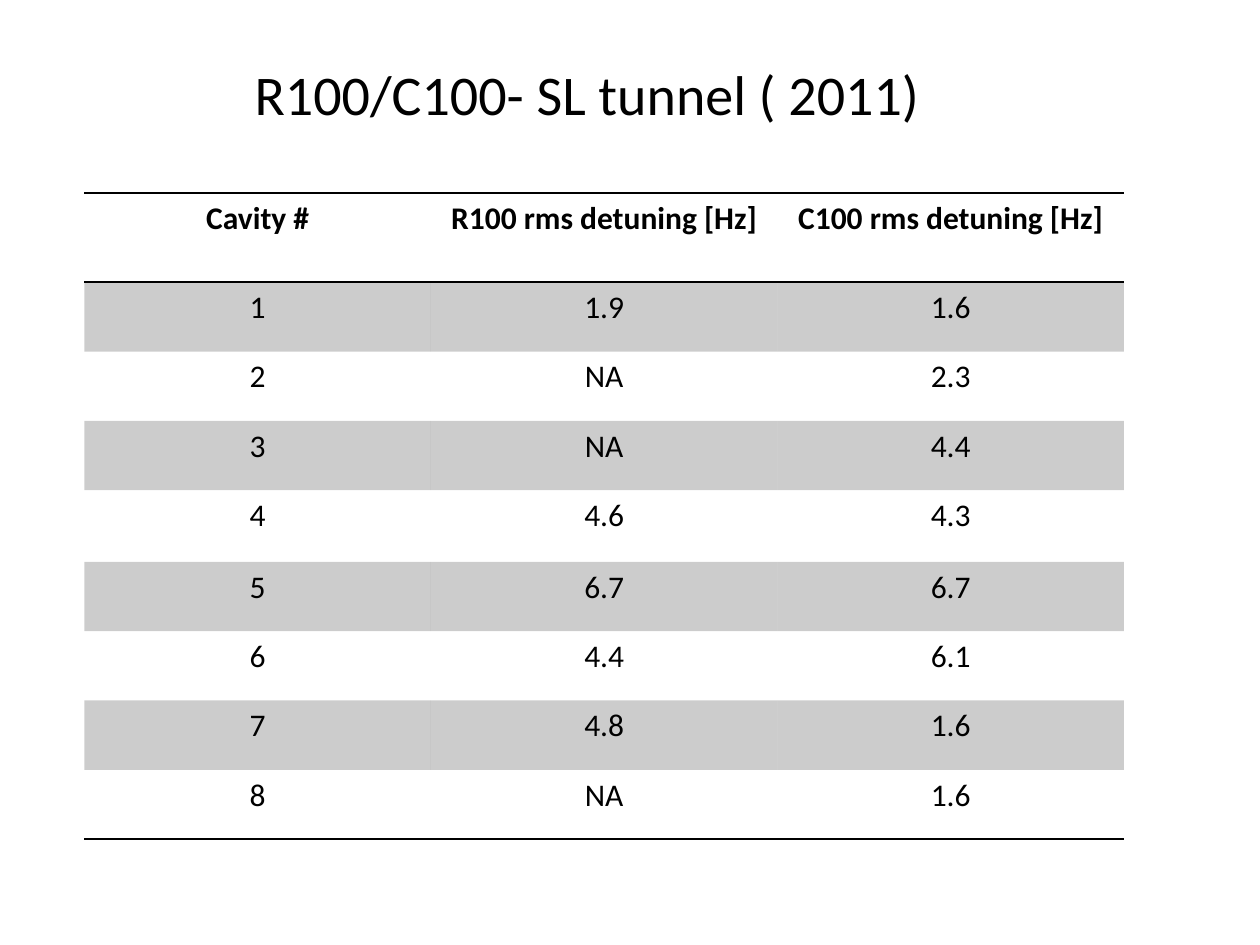
import pptx
import pptx.dml.color
import pptx.enum.text
import pptx.oxml
import pptx.oxml.ns
import pptx.util
from pptx.util import Inches

BLACK = pptx.dml.color.RGBColor(0, 0, 0)
BAND_OPACITY = 20
NO_STYLE_NO_GRID = "{2D5ABB26-0587-4C30-8999-92F81FD0307C}"
TITLE_FORMAT = {"name": "Calibri", "size": pptx.util.Pt(32), "bold": False}
HEADER_FORMAT = {"name": "Calibri", "size": pptx.util.Pt(18), "bold": True}
BODY_FORMAT = {**HEADER_FORMAT, "bold": False}

ROWS = [
    ("Cavity #", "R100 rms detuning [Hz]", "C100 rms detuning [Hz]"),
    ("1", "1.9", "1.6"),
    ("2", "NA", "2.3"),
    ("3", "NA", "4.4"),
    ("4", "4.6", "4.3"),
    ("5", "6.7", "6.7"),
    ("6", "4.4", "6.1"),
    ("7", "4.8", "1.6"),
    ("8", "NA", "1.6"),
]
COLUMN_WIDTH = 2.75
ROW_HEIGHTS = [0.71] + [0.55] * 3 + [0.57] + [0.55] * 4


def write_text(text_frame, text, font_format, alignment):
    paragraph = text_frame.paragraphs[0]
    paragraph.alignment = alignment
    run = paragraph.add_run()
    run.text = text
    for attribute, value in font_format.items():
        setattr(run.font, attribute, value)
    run.font.color.rgb = BLACK


def add_title(slide, text):
    title = slide.shapes.title
    box = {"left": 1.92, "top": 0.42, "width": 5.75, "height": 0.83}
    for attribute, value in box.items():
        setattr(title, attribute, Inches(value))
    text_frame = title.text_frame
    text_frame.word_wrap = True
    text_frame.auto_size = pptx.enum.text.MSO_AUTO_SIZE.NONE
    text_frame.vertical_anchor = pptx.enum.text.MSO_ANCHOR.TOP
    write_text(text_frame, text, TITLE_FORMAT, pptx.enum.text.PP_ALIGN.LEFT)


def add_borders(cell, sides):
    """Draw 1 pt lines on the given sides; call before filling the cell."""
    properties = cell._tc.get_or_add_tcPr()
    for side in sides:
        properties.append(pptx.oxml.parse_xml(
            f'<a:ln{side} {pptx.oxml.ns.nsdecls("a")} w="12700">'
            f'<a:solidFill><a:srgbClr val="{BLACK}"/></a:solidFill></a:ln{side}>'
        ))


def fill_band(cell):
    """Fill with translucent black."""
    cell.fill.solid()
    cell.fill.fore_color.rgb = BLACK
    color = cell._tc.tcPr.find(".//" + pptx.oxml.ns.qn("a:srgbClr"))
    color.append(pptx.oxml.parse_xml(
        f'<a:alpha {pptx.oxml.ns.nsdecls("a")} val="{BAND_OPACITY * 1000}"/>'
    ))


def add_detuning_table(slide):
    column_count = len(ROWS[0])
    frame = slide.shapes.add_table(
        len(ROWS), column_count, Inches(0.67), Inches(1.53),
        Inches(COLUMN_WIDTH * column_count), Inches(sum(ROW_HEIGHTS)),
    )
    table = frame.table
    table._tbl.tblPr.find(pptx.oxml.ns.qn("a:tableStyleId")).text = NO_STYLE_NO_GRID
    for column in table.columns:
        column.width = Inches(COLUMN_WIDTH)

    border_sides = {0: "TB", len(ROWS) - 1: "B"}
    for row_index, (values, height) in enumerate(zip(ROWS, ROW_HEIGHTS)):
        table.rows[row_index].height = Inches(height)
        font_format = BODY_FORMAT if row_index else HEADER_FORMAT
        for column_index, value in enumerate(values):
            cell = table.cell(row_index, column_index)
            write_text(cell.text_frame, value, font_format,
                       pptx.enum.text.PP_ALIGN.CENTER)
            add_borders(cell, border_sides.get(row_index, ""))
            if row_index % 2:
                fill_band(cell)
            else:
                cell.fill.background()


def main():
    presentation = pptx.Presentation()
    presentation.slide_width = Inches(10)
    presentation.slide_height = Inches(7.5)
    slide = presentation.slides.add_slide(
        presentation.slide_layouts.get_by_name("Title Only"))
    add_title(slide, "R100/C100- SL tunnel ( 2011)")
    add_detuning_table(slide)
    presentation.save("out.pptx")


if __name__ == "__main__":
    main()
